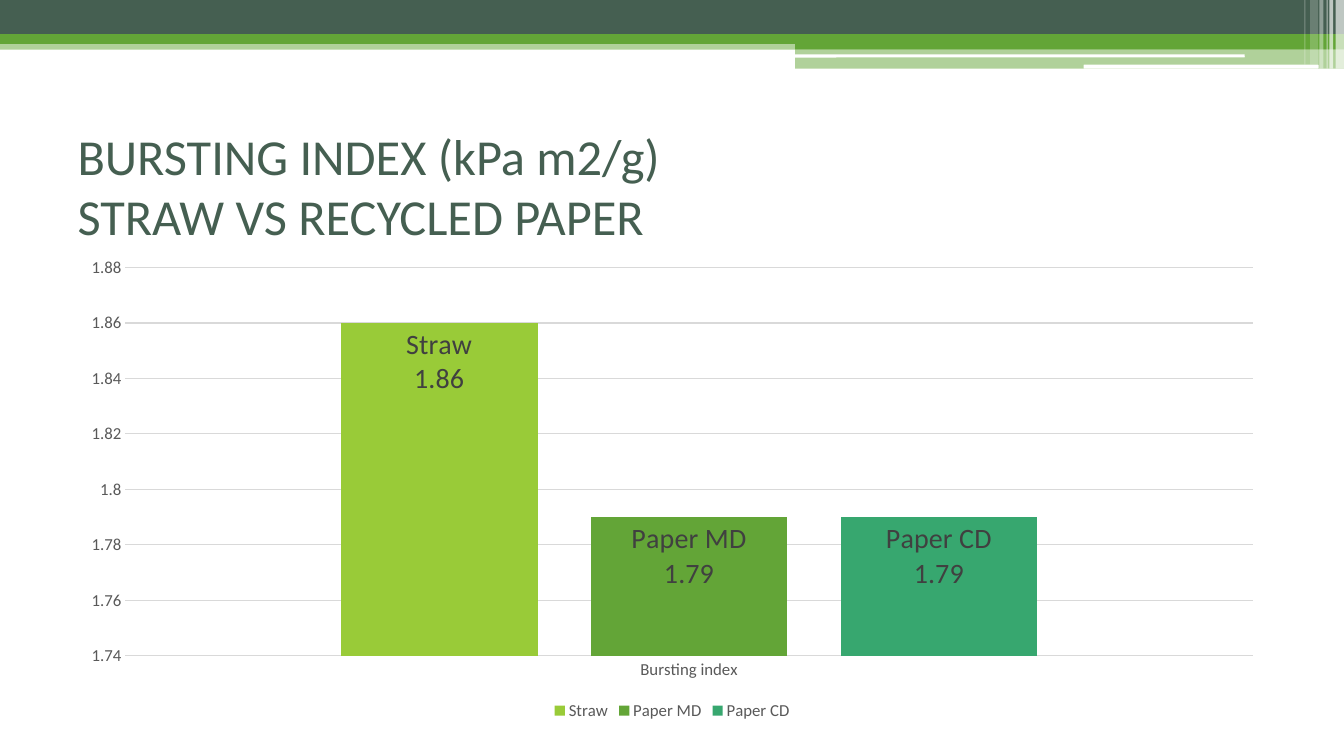
"""Build the bursting index slide: banded header, title and column chart."""
from dataclasses import dataclass

from lxml.etree import SubElement
from pptx import Presentation
from pptx.chart.data import CategoryChartData
from pptx.dml.color import RGBColor
from pptx.enum.chart import XL_CHART_TYPE, XL_LABEL_POSITION, XL_LEGEND_POSITION, XL_TICK_MARK
from pptx.enum.shapes import MSO_SHAPE
from pptx.enum.text import MSO_ANCHOR, MSO_AUTO_SIZE, PP_ALIGN
from pptx.oxml import parse_xml
from pptx.oxml.ns import nsdecls, qn
from pptx.util import Cm, Pt


@dataclass(frozen=True)
class Theme:
    font: str = "Calibri"
    dark: str = "455F51"
    green: str = "63A537"
    white: str = "FFFFFF"
    axis_text: str = "595959"
    label_text: str = "404040"
    grid: str = "D9D9D9"
    title_size: int = 36
    label_size: int = 20
    axis_size: int = 12


THEME = Theme()
SLIDE_SIZE = (33.87, 19.05)
TITLE = "BURSTING INDEX (kPa m2/g)\vSTRAW VS RECYCLED PAPER"
TITLE_BOX = (1.7, 3.18, 30.48, 2.97)
CHART_BOX = (1.7, 6.25, 30.48, 12.01)
CATEGORY = "Bursting index"
PAPERS = [
    ("Straw", 1.86, "99CB38"),
    ("Paper MD", 1.79, THEME.green),
    ("Paper CD", 1.79, "37A76F"),
]
SCALE = (1.74, 1.88, 0.02)
HEADER_BANDS = [
    ((0, 1.02, 33.87, 0.23), THEME.green, 50),
    ((0, 0, 33.87, 0.86), THEME.dark, 100),
    ((0, 0.86, 33.87, 0.25), THEME.green, 100),
    ((20.04, 0.99, 13.83, 0.25), THEME.green, 100),
    ((20.04, 1.24, 13.83, 0.49), THEME.green, 50),
]
HEADER_SLITS = [(20.02, 1.37, 11.35, 0.08), (27.31, 1.63, 5.92, 0.1)]
EDGE_STRIPES = [
    (33.66, 0.21, 1.73, 65),
    (33.5, 0.1, 1.73, 65),
    (33.43, 0.03, 1.73, 60),
    (33.25, 0.1, 1.73, 40),
    (33.02, 0.2, 1.63, 20),
    (32.87, 0.03, 1.63, 30),
]


def lengths(box):
    return [Cm(side) for side in box]


def style_font(font, size, color):
    font.name, font.size = THEME.font, Pt(size)
    font.color.rgb = RGBColor.from_string(color)


def add_band(slide, box, color, opacity=100, outline=MSO_SHAPE.RECTANGLE):
    band = slide.shapes.add_shape(outline, *lengths(box))
    band.shadow.inherit = False
    band.line.fill.background()
    band.fill.solid()
    band.fill.fore_color.rgb = RGBColor.from_string(color)
    if opacity < 100:
        tint = band.fill._xPr.find(".//" + qn("a:srgbClr"))
        tint.append(parse_xml(f'<a:alpha {nsdecls("a")} val="{opacity * 1000}"/>'))


def add_header(slide):
    for box, color, opacity in HEADER_BANDS:
        add_band(slide, box, color, opacity)
    for box in HEADER_SLITS:
        add_band(slide, box, THEME.white, outline=MSO_SHAPE.ROUNDED_RECTANGLE)
    for left, width, height, opacity in EDGE_STRIPES:
        add_band(slide, (left, 0, width, height), THEME.white, opacity)


def fill_title(title):
    title.left, title.top, title.width, title.height = lengths(TITLE_BOX)
    frame = title.text_frame
    frame.text = TITLE
    frame.auto_size = MSO_AUTO_SIZE.NONE
    frame.vertical_anchor = MSO_ANCHOR.MIDDLE
    heading = frame.paragraphs[0]
    heading.alignment = PP_ALIGN.LEFT
    for run in heading.runs:
        style_font(run.font, THEME.title_size, THEME.dark)


def style_axis(axis):
    axis.major_tick_mark = axis.minor_tick_mark = XL_TICK_MARK.NONE
    style_font(axis.tick_labels.font, THEME.axis_size, THEME.axis_text)


def style_line(line):
    line.color.rgb = RGBColor.from_string(THEME.grid)
    line.width = Pt(0.75)


def style_column(column, color):
    column.format.fill.solid()
    column.format.fill.fore_color.rgb = RGBColor.from_string(color)
    column.invert_if_negative = False
    labels = column.data_labels
    labels.show_value = labels.show_series_name = True
    labels.position = XL_LABEL_POSITION.INSIDE_END
    style_font(labels.font, THEME.label_size, THEME.label_text)
    separator = SubElement(labels._element, qn("c:separator"))
    separator.text = "\n"
    labels._element.find(qn("c:showBubbleSize")).addnext(separator)


def add_bursting_chart(slide):
    strengths = CategoryChartData(number_format="General")
    strengths.categories = [CATEGORY]
    for paper, index, _ in PAPERS:
        strengths.add_series(paper, [index])
    chart = slide.shapes.add_chart(
        XL_CHART_TYPE.COLUMN_CLUSTERED, *lengths(CHART_BOX), strengths).chart
    chart.font.name, chart.font.size = THEME.font, Pt(10)
    chart.has_title = False
    chart.has_legend = True
    chart.legend.position = XL_LEGEND_POSITION.BOTTOM
    chart.legend.include_in_layout = False
    style_font(chart.legend.font, THEME.axis_size, THEME.axis_text)
    style_axis(chart.category_axis)
    style_line(chart.category_axis.format.line)
    scale = chart.value_axis
    style_axis(scale)
    scale.minimum_scale, scale.maximum_scale, scale.major_unit = SCALE
    scale.format.line.fill.background()
    style_line(scale.major_gridlines.format.line)
    columns = chart.plots[0]
    columns.gap_width, columns.overlap = 219, -27
    columns.vary_by_categories = False
    for column, (_, _, color) in zip(columns.series, PAPERS):
        style_column(column, color)


def main():
    deck = Presentation()
    deck.slide_width, deck.slide_height = lengths(SLIDE_SIZE)
    slide = deck.slides.add_slide(deck.slide_layouts[5])
    add_header(slide)
    fill_title(slide.shapes.title)
    add_bursting_chart(slide)
    deck.save("out.pptx")


if __name__ == "__main__":
    main()
